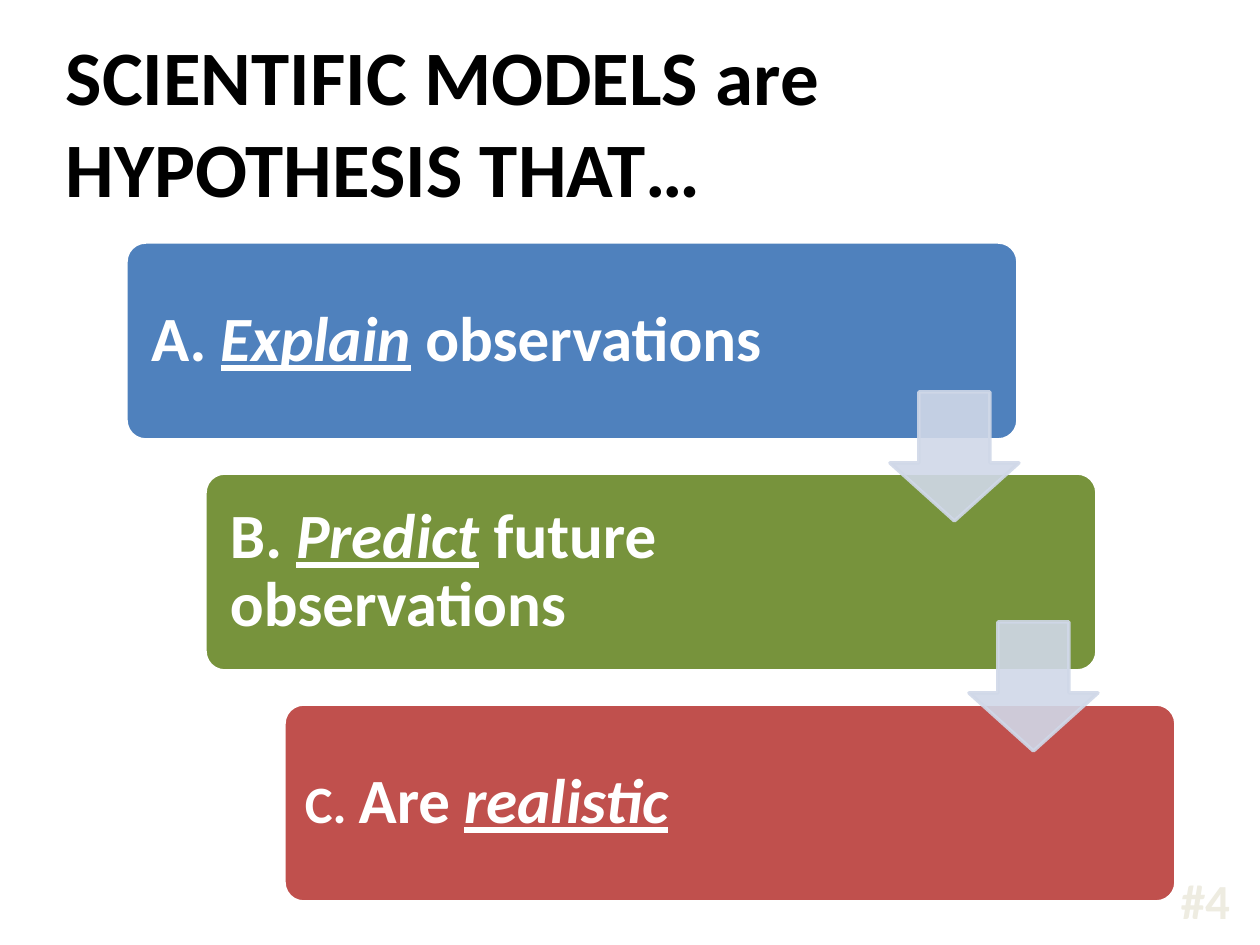
"""Build a slide that steps down through three features of scientific models."""
import pptx
import pptx.dml.color
import pptx.enum.shapes
import pptx.enum.text
import pptx.oxml
import pptx.oxml.ns
import pptx.util

PX = 914400 / 126
RGB = pptx.dml.color.RGBColor.from_string
SHAPE = pptx.enum.shapes.MSO_SHAPE
ALIGN = pptx.enum.text.PP_ALIGN
THEME = {
    "font": "Calibri", "title": "000000", "text": "FFFFFF", "border": "FFFFFF",
    "arrow": "D0D8E8", "number": "EEECE1",
    "title_pt": 44, "body_pt": 36, "letter_pt": 30, "number_pt": 28, "line_pt": 2,
}
BODY = {"size": THEME["body_pt"]}
KEY = {"size": THEME["body_pt"], "italic": True, "underline": True}

prs = pptx.Presentation()
prs.slide_width, prs.slide_height = pptx.util.Inches(10), pptx.util.Inches(7.5)
s = prs.slides.add_slide(prs.slide_layouts[6])


def add_text(box, runs, color, inset=(13, 6), align=ALIGN.LEFT, spacing=1.0):
    sp = s.shapes.add_textbox(*[round(v * PX) for v in box])
    tf = sp.text_frame
    dx, dy = [round(v * PX) for v in inset]
    frame = {"word_wrap": True, "vertical_anchor": pptx.enum.text.MSO_ANCHOR.MIDDLE,
             "margin_left": dx, "margin_right": dx, "margin_top": dy, "margin_bottom": dy}
    for name, value in frame.items():
        setattr(tf, name, value)
    p = tf.paragraphs[0]
    p.alignment, p.line_spacing = align, spacing
    for i, (text, fmt) in enumerate(runs):
        if text == "\n":
            p.add_line_break()
            continue
        r = p.add_run()
        r.text = text
        r.font.color.rgb = RGB(color)
        font = {"name": THEME["font"], "bold": True, **fmt}
        font["size"] = pptx.util.Pt(font["size"])
        for name, value in font.items():
            setattr(r.font, name, value)


def add_block(kind, box, fill, line, adjustments, opacity=100):
    sp = s.shapes.add_shape(kind, *[round(v * PX) for v in box])
    sp.shadow.inherit = False
    for i, value in enumerate(adjustments):
        sp.adjustments[i] = value
    sp.fill.solid()
    sp.fill.fore_color.rgb = RGB(fill)
    sp.line.color.rgb = RGB(line)
    sp.line.width = pptx.util.Pt(THEME["line_pt"])
    if opacity < 100:
        for clr in sp._element.spPr.iter(pptx.oxml.ns.qn("a:srgbClr")):
            alpha = pptx.oxml.parse_xml(f'<a:alpha {pptx.oxml.ns.nsdecls("a")}/>')
            alpha.set("val", str(opacity * 1000))
            clr.append(alpha)


title = {"size": THEME["title_pt"]}
add_text((53, 21, 1187, 199),
         [("SCIENTIFIC MODELS are", title), ("\n", {}), ("HYPOTHESIS THAT…", title)],
         THEME["title"])

steps = [
    ("4F81BD", 19, [("A. ", BODY), ("Explain", KEY), (" observations", BODY)]),
    ("77933C", 19, [("B. ", BODY), ("Predict", KEY), (" future observations", BODY)]),
    ("C0504D", 15, [("C. ", {"size": THEME["letter_pt"]}), ("Are ", BODY),
                    ("realistic", KEY)]),
]
for i, (fill, inset, runs) in enumerate(steps):
    x, y = 126 + 79 * i, 242 + 231 * i
    add_block(SHAPE.ROUNDED_RECTANGLE, (x, y, 892, 198), fill, THEME["border"], [0.1])
    add_text((x + 6, y + 6, 673, 186), runs, THEME["text"], (inset, inset), spacing=0.9)

for i in range(len(steps) - 1):
    add_block(SHAPE.DOWN_ARROW, (890 + 79 * i, 392 + 230 * i, 129, 129),
              THEME["arrow"], THEME["arrow"], [0.55, 0.45], 90)

add_text((1143, 870, 100, 60), [("#4", {"size": THEME["number_pt"]})],
         THEME["number"], align=ALIGN.RIGHT)

prs.save("out.pptx")
